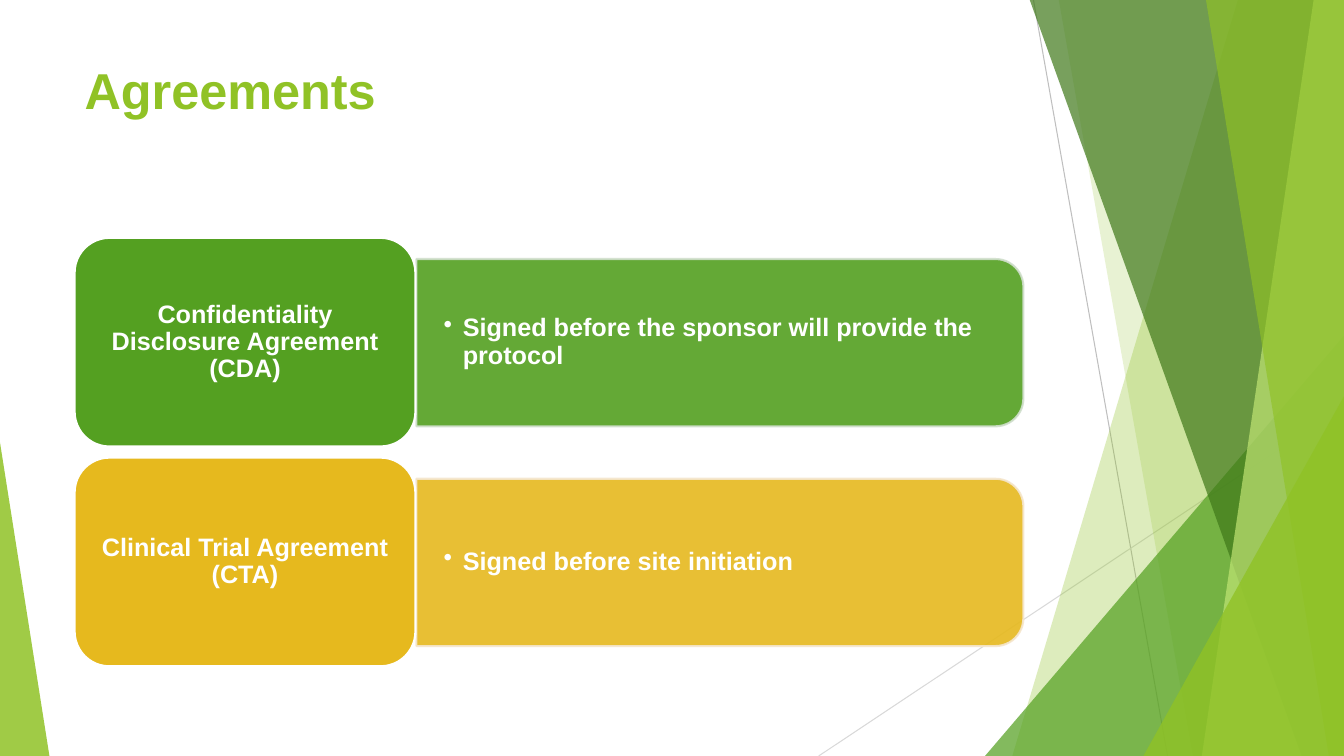
from lxml.etree import SubElement
from pptx import Presentation
from pptx.dml.color import RGBColor
from pptx.enum.shapes import MSO_CONNECTOR, MSO_SHAPE
from pptx.enum.text import MSO_ANCHOR, PP_ALIGN
from pptx.oxml.ns import qn
from pptx.util import Pt

PX = 9144  # 100 px to the inch
WIDE, HIGH = 1333, 750
HUES = {
    "lime": "90C226", "pale": "C0E474", "green": "54A021", "dark": "3F7819",
    "gold": "E6B91E", "mint": "D1DFCD", "cream": "F5E6CD", "white": "FFFFFF",
    "gray": "BFBFBF", "mist": "D9D9D9",
}
FONT = {"name": "Arial", "bold": True}


class Deck:
    def __init__(self):
        self.show = Presentation()
        self.show.slide_width, self.show.slide_height = WIDE * PX, HIGH * PX
        self.slide = self.show.slides.add_slide(self.show.slide_layouts[6])
        self.shapes = self.slide.shapes

    def tint(self, fill, hue, alpha=100):
        """Make a fill solid, with its opacity in percent."""
        fill.solid()
        fill.fore_color.rgb = RGBColor.from_string(HUES[hue])
        if alpha < 100:
            color = fill._xPr.find(qn("a:solidFill"))[0]
            SubElement(color, qn("a:alpha"), val=str(alpha * 1000))

    def paint(self, shape, hue, alpha=100, edge=None):
        shape.shadow.inherit = False
        self.tint(shape.fill, hue, alpha)
        if edge:
            self.tint(shape.line.fill, edge, alpha)
            shape.line.width = Pt(1.5)
        else:
            shape.line.fill.background()

    def line(self, start, end, hue):
        ends = [n * PX for n in start + end]
        rule = self.shapes.add_connector(MSO_CONNECTOR.STRAIGHT, *ends)
        self.tint(rule.line.fill, hue)
        rule.line.width = Pt(0.75)
        SubElement(rule._element.spPr, qn("a:effectLst"))

    def shard(self, points, hue, alpha):
        pen = self.shapes.build_freeform(*points[0], scale=PX)
        pen.add_line_segments(points[1:], close=True)
        self.paint(pen.convert_to_shape(), hue, alpha)

    def shape(self, kind, box, hue, alpha=100, edge=None, adjust=None):
        item = self.shapes.add_shape(kind, *[n * PX for n in box])
        if adjust is not None:
            item.adjustments[0] = adjust
        self.paint(item, hue, alpha, edge)
        return item

    def label(self, item, words, hue="white", size=18, inset=(10, 5),
              align=PP_ALIGN.LEFT, space=None):
        frame = item.text_frame
        side, top = [n * PX for n in inset]
        form = {"word_wrap": True, "vertical_anchor": MSO_ANCHOR.MIDDLE,
                "margin_left": side, "margin_right": side,
                "margin_top": top, "margin_bottom": top}
        para = frame.paragraphs[0]
        run = para.add_run()
        run.text = words
        looks = ((frame, form),
                 (para, {"alignment": align, "line_spacing": space}),
                 (run.font, FONT | {"size": Pt(size)}))
        for part, look in looks:
            for key, value in look.items():
                setattr(part, key, value)
        self.tint(run.font.fill, hue)
        return para

    def text(self, box, words, **style):
        item = self.shapes.add_textbox(*[n * PX for n in box])
        return self.label(item, words, **style)

    def bullet(self, para, dent):
        props = para._p.get_or_add_pPr()
        props.set("marL", str(dent * PX))
        props.set("indent", str(-dent * PX))
        SubElement(props, qn("a:buChar"), char="•")

    def row(self, top, name, note, hue, edge):
        """Draw an agreement tile with its note bar on the right."""
        long, thick = 602, 166
        left, mid = 413, top + 104
        bar = self.shape(
            MSO_SHAPE.ROUND_2_SAME_RECTANGLE,
            (left + (long - thick) // 2, mid - long // 2, thick, long),
            hue, 90, edge)
        bar.rotation = 90
        para = self.text((left, mid - 75, 594, 149), note,
                         inset=(27, 14), space=0.9)
        self.bullet(para, 19)
        tile = self.shape(MSO_SHAPE.ROUNDED_RECTANGLE, (74, top, 338, 207),
                          hue, edge="white")
        self.label(tile, name, inset=(7, 4), align=PP_ALIGN.CENTER, space=0.9)


def main():
    deck = Deck()
    deck.line((1025, 0), (1158, HIGH), "gray")
    deck.line((WIDE, 403), (812, HIGH), "mist")

    def band(top, foot, hue, alpha):
        """Fill from a slanted left edge to the right of the slide."""
        deck.shard([(top, -1), (WIDE, -1), (WIDE, HIGH), (foot, HIGH)],
                   hue, alpha)

    def wedge(left, wide, high, hue, alpha, tip):
        deck.shape(MSO_SHAPE.ISOSCELES_TRIANGLE,
                   (left, HIGH - high, wide, high), hue, alpha, adjust=tip)

    band(1228, 1004, "lime", 30)
    band(1050, 1183, "lime", 20)
    wedge(977, 356, 417, "green", 72, 1)
    band(1021, 1291, "dark", 70)
    band(1303, 1192, "pale", 70)
    band(1196, 1318, "lime", 65)
    wedge(1134, 199, 357, "lime", 80, 1)
    wedge(0, 49, 311, "lime", 85, 0)

    deck.text((74, 53, 940, 72), "Agreements", hue="lime", size=36)
    deck.row(236, "Confidentiality Disclosure Agreement (CDA)",
             "Signed before the sponsor will provide the protocol",
             "green", "mint")
    deck.row(454, "Clinical Trial Agreement (CTA)",
             "Signed before site initiation", "gold", "cream")
    deck.show.save("out.pptx")


if __name__ == "__main__":
    main()
